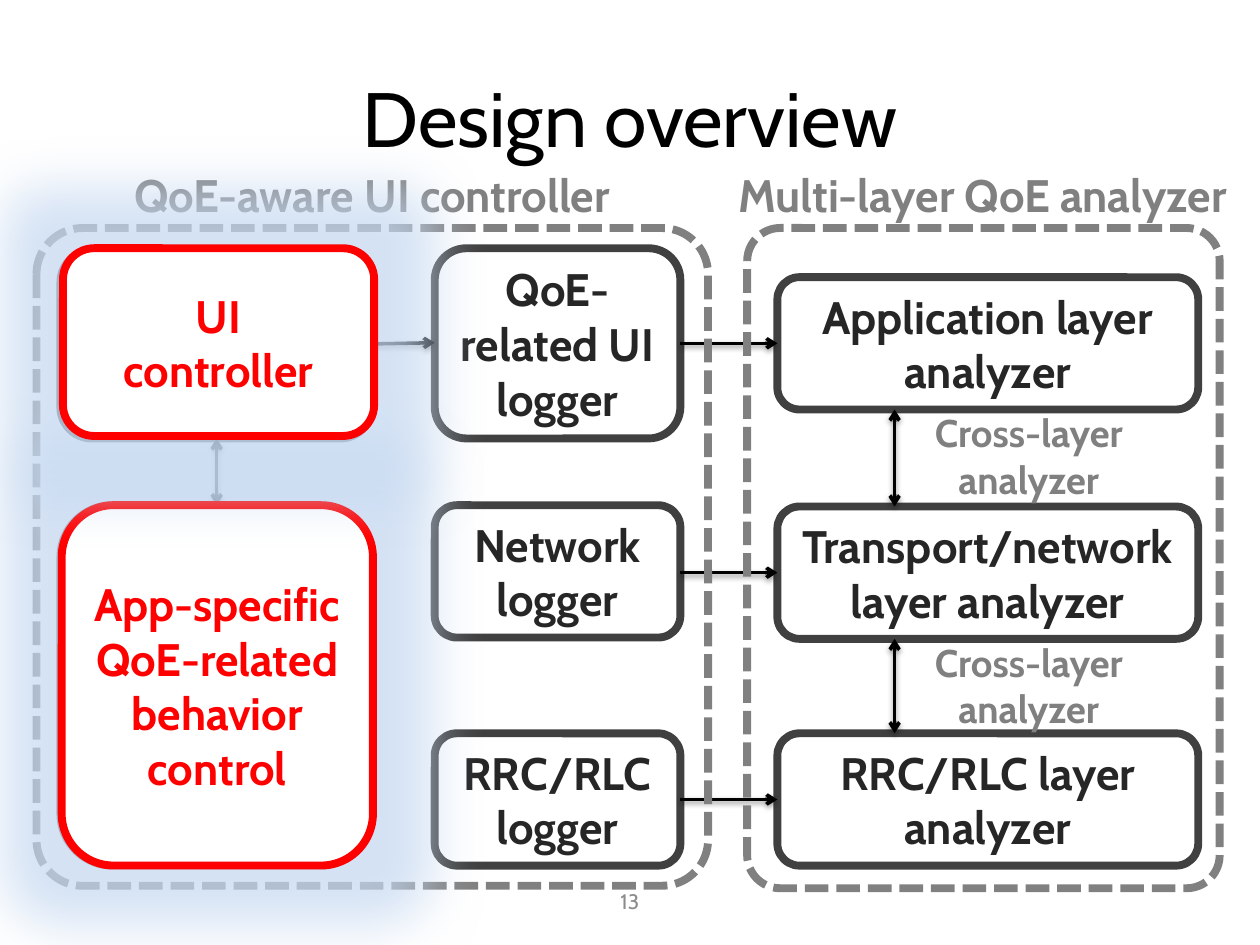
"""Build the design overview slide with its two framed groups of linked boxes."""
from dataclasses import dataclass

import lxml.etree
import pptx
import pptx.dml.color
import pptx.enum.dml
import pptx.enum.shapes
import pptx.enum.text
import pptx.oxml.ns
import pptx.util

INK = {
    "black": "000000",
    "text": "262626",
    "edge": "404040",
    "gray": "808080",
    "page": "8C8C8C",
    "red": "FF0000",
    "white": "FFFFFF",
    "glow": "C6D9F1",
}
FONT = "Cabin"
COLS, ROWS = 100, 75
WIDTH, HEIGHT = pptx.util.Inches(10), pptx.util.Inches(7.5)
ANCHOR = pptx.enum.text.MSO_ANCHOR


@dataclass
class Area:
    col: float
    row: float
    wide: float
    high: float

    def place(self) -> tuple[int, int, int, int]:
        return across(self.col), down(self.row), across(self.wide), down(self.high)


@dataclass
class Box:
    area: Area
    text: str
    edge: str = "edge"
    ink: str = "text"
    glow: bool = False


@dataclass
class Label:
    area: Area
    text: str
    size: float
    ink: str = "gray"
    bold: bool = True
    grow: bool = True


@dataclass
class Link:
    start: tuple[float, float]
    end: tuple[float, float]
    both: bool = False


def across(cols: float) -> int:
    return round(WIDTH * cols / COLS)


def down(rows: float) -> int:
    return round(HEIGHT * rows / ROWS)


def tint(name: str) -> pptx.dml.color.RGBColor:
    return pptx.dml.color.RGBColor.from_string(INK[name])


def add_node(home, tag: str, **attrs):
    node = lxml.etree.SubElement(home, pptx.oxml.ns.qn(tag))
    for key, value in attrs.items():
        node.set(key, str(value))
    return node


def add_tint(home, name: str, share: int) -> None:
    shade = add_node(home, "a:srgbClr", val=INK[name])
    add_node(shade, "a:alpha", val=share * 1000)


def write(frame, text: str, size: float, ink: str, bold: bool) -> None:
    frame.word_wrap = True
    frame.text = text
    for line in frame.paragraphs:
        line.alignment = pptx.enum.text.PP_ALIGN.CENTER
        for run in line.runs:
            run.font.name = FONT
            run.font.size = pptx.util.Pt(size)
            run.font.bold = bold
            run.font.color.rgb = tint(ink)


def add_round(slide, area: Area, edge: str):
    kind = pptx.enum.shapes.MSO_SHAPE.ROUNDED_RECTANGLE
    shape = slide.shapes.add_shape(kind, *area.place())
    shape.shadow.inherit = False
    shape.line.color.rgb = tint(edge)
    shape.line.width = pptx.util.Pt(4.5)
    return shape


def add_box(slide, box: Box) -> None:
    shape = add_round(slide, box.area, box.edge)
    shape.fill.solid()
    shape.fill.fore_color.rgb = tint("white")
    shape.text_frame.vertical_anchor = ANCHOR.MIDDLE
    write(shape.text_frame, box.text, 26, box.ink, True)
    if box.glow:
        effects = shape._element.spPr.find(pptx.oxml.ns.qn("a:effectLst"))
        glow = add_node(effects, "a:glow", rad=pptx.util.Pt(63))
        add_tint(glow, "glow", 75)


def add_frame(slide, area: Area) -> None:
    shape = add_round(slide, area, "gray")
    shape.adjustments[0] = 0.07
    shape.fill.background()
    shape.line.dash_style = pptx.enum.dml.MSO_LINE.SQUARE_DOT
    dash = shape.line._ln.find(pptx.oxml.ns.qn("a:prstDash"))
    dash.set("val", "sysDash")


def add_label(slide, label: Label) -> None:
    frame = slide.shapes.add_textbox(*label.area.place()).text_frame
    write(frame, label.text, label.size, label.ink, label.bold)
    if label.grow:
        frame.auto_size = pptx.enum.text.MSO_AUTO_SIZE.SHAPE_TO_FIT_TEXT
    else:
        frame.vertical_anchor = ANCHOR.MIDDLE


def add_link(slide, link: Link) -> None:
    ends = [side(cell) for point in (link.start, link.end)
            for side, cell in zip((across, down), point)]
    line = slide.shapes.add_connector(pptx.enum.shapes.MSO_CONNECTOR.STRAIGHT, *ends)
    line.line.color.rgb = tint("black")
    line.line.width = pptx.util.Pt(2)
    stroke = line.line._ln
    if link.both:
        add_node(stroke, "a:headEnd", type="arrow")
    add_node(stroke, "a:tailEnd", type="arrow")
    effects = add_node(line._element.spPr, "a:effectLst")
    shade = add_node(effects, "a:outerShdw", blurRad=40000, dist=20000,
                     dir=5400000, rotWithShape=0)
    add_tint(shade, "black", 38)


LOW = 10.5
TIERS = (22, 40.2, 58.2)
LOGS = (34.5, 19.5)
TESTS = (61.7, 33.4)
CROSS = 71
APP = "App-specific QoE-related\nbehavior\ncontrol"
UI = "UI\ncontroller"

BOXES = [
    Box(Area(4.8, 19.9, 24.7, 14.9), UI),
    Box(Area(4.8, 40.1, 24.7, 28.6), APP),
    Box(Area(LOGS[0], 19.7, LOGS[1], 15.1), "QoE-related UI logger"),
    Box(Area(LOGS[0], 40.1, LOGS[1], LOW), "Network logger"),
    Box(Area(LOGS[0], 58.2, LOGS[1], LOW), "RRC/RLC logger"),
] + [
    Box(Area(TESTS[0], tier, TESTS[1], LOW), text)
    for tier, text in zip(TIERS, ("Application layer\nanalyzer",
                                  "Transport/network layer analyzer",
                                  "RRC/RLC layer\nanalyzer"))
]
LINKS = [
    Link((29.5, 27.3), (LOGS[0], 27.2)),
    Link((17.2, 34.8), (17.2, 40.1), True),
] + [
    Link((sum(LOGS), tier + LOW / 2), (TESTS[0], tier + LOW / 2)) for tier in TIERS
] + [
    Link((CROSS, upper + LOW), (CROSS, lower), True)
    for upper, lower in zip(TIERS, TIERS[1:])
]
FRAMES = [Area(59.3, 18.1, 37.5, 52.4), Area(2.9, 18.1, 53.3, 52.2)]
LABELS = [
    Label(Area(5, 3, 90, 12.5), "Design overview", 44, "black", False, False),
    Label(Area(5, 69.5, 90, 4), "13", 12, "page", False, False),
    Label(Area(2.9, 12.8, 53.3, 5.4), "QoE-aware UI controller", 26),
    Label(Area(57.2, 12.8, 41.6, 5.4), "Multi-layer QoE analyzer", 26),
] + [
    Label(Area(72.5, tier + LOW - 0.5, 18.3, 8.4), "Cross-layer\nanalyzer", 22)
    for tier in TIERS[:2]
]
FOCUS = [
    Box(Area(4.9, 40.1, 24.7, 28.6), APP, "red", "red", True),
    Box(Area(5, 19.7, 24.7, 14.9), UI, "red", "red", True),
]


def main() -> None:
    deck = pptx.Presentation()
    deck.slide_width, deck.slide_height = WIDTH, HEIGHT
    slide = deck.slides.add_slide(deck.slide_layouts[6])
    layers = ((add_box, BOXES), (add_link, LINKS), (add_frame, FRAMES),
              (add_label, LABELS), (add_box, FOCUS))
    for draw, items in layers:
        for item in items:
            draw(slide, item)
    deck.save("out.pptx")


if __name__ == "__main__":
    main()
